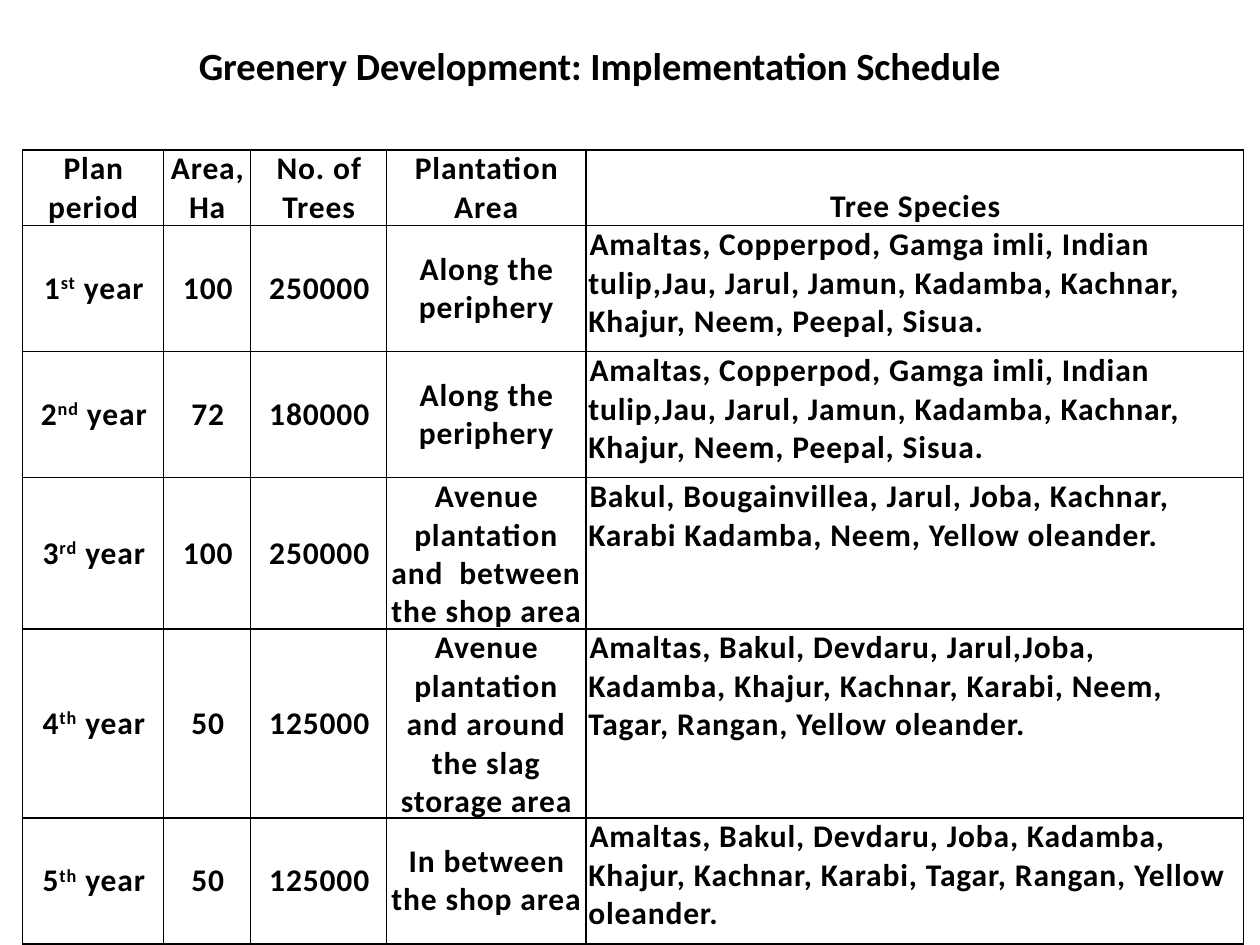
from lxml import etree
from pptx import Presentation
from pptx.dml.color import RGBColor
from pptx.enum.text import MSO_ANCHOR, MSO_AUTO_SIZE, PP_ALIGN
from pptx.oxml.ns import qn
from pptx.util import Inches, Pt

CENTER, LEFT = PP_ALIGN.CENTER, PP_ALIGN.LEFT
TOP, MIDDLE, BOTTOM = MSO_ANCHOR.TOP, MSO_ANCHOR.MIDDLE, MSO_ANCHOR.BOTTOM
RESIZE_SHAPE = MSO_AUTO_SIZE.SHAPE_TO_FIT_TEXT
TITLE_ONLY = 5
FONT = "Calibri"
COLORS = {"text": "000000", "border": "000000", "cell": "FFFFFF"}

TITLE = "Greenery Development: Implementation Schedule"
HEADERS = ["Plan period", "Area, Ha", "No. of Trees", "Plantation Area", "Tree Species"]
PERIPHERY_SPECIES = (
    "Amaltas, Copperpod, Gamga imli, Indian tulip,Jau, Jarul, Jamun, "
    "Kadamba, Kachnar, Khajur, Neem, Peepal, Sisua."
)
SCHEDULE = [
    ("1", "st", "100", "250000", "Along the periphery", PERIPHERY_SPECIES),
    ("2", "nd", "72", "180000", "Along the periphery", PERIPHERY_SPECIES),
    ("3", "rd", "100", "250000", "Avenue plantation and  between the shop area",
     "Bakul, Bougainvillea, Jarul, Joba, Kachnar, Karabi Kadamba, Neem, "
     "Yellow oleander."),
    ("4", "th", "50", "125000", "Avenue plantation and around the slag storage area",
     "Amaltas, Bakul, Devdaru, Jarul,Joba, Kadamba, Khajur, Kachnar, Karabi, "
     "Neem, Tagar, Rangan, Yellow oleander."),
    ("5", "th", "50", "125000", "In between the shop area",
     "Amaltas, Bakul, Devdaru, Joba, Kadamba, Khajur, Kachnar, Karabi, Tagar, "
     "Rangan, Yellow oleander."),
]
COLUMN_WIDTHS = [1.12, 0.69, 1.08, 1.58, 5.22]
ROW_HEIGHTS = [0.5, 1, 1, 1, 1.2, 1]


def format_run(span, size):
    """Apply the bold slide font to a run."""
    span.font.name = FONT
    span.font.size = Pt(size)
    span.font.bold = True
    span.font.color.rgb = RGBColor.from_string(COLORS["text"])


def add_title(page):
    """Place and format the slide title."""
    box = page.shapes.title
    box.left, box.top = Inches(0.05), Inches(0.28)
    box.width, box.height = Inches(9.42), Inches(0.47)
    frame = box.text_frame
    frame.text = TITLE
    frame.word_wrap = True
    frame.auto_size = RESIZE_SHAPE
    frame.vertical_anchor = TOP
    para = frame.paragraphs[0]
    para.alignment = CENTER
    format_run(para.runs[0], 22)


def add_borders(cell):
    """Draw a thin line on all four sides of a cell."""
    properties = cell._tc.get_or_add_tcPr()
    for position, side in enumerate(("a:lnL", "a:lnR", "a:lnT", "a:lnB")):
        line = etree.Element(qn(side), w=str(Pt(1)))
        fill = etree.SubElement(line, qn("a:solidFill"))
        etree.SubElement(fill, qn("a:srgbClr"), val=COLORS["border"])
        properties.insert(position, line)


def fill_cell(cell, parts, alignment, anchor):
    """Write text parts to a cell, raising every second part."""
    cell.margin_left = cell.margin_right = Inches(0.02)
    cell.margin_top = cell.margin_bottom = 0
    cell.vertical_anchor = anchor
    cell.fill.solid()
    cell.fill.fore_color.rgb = RGBColor.from_string(COLORS["cell"])
    add_borders(cell)
    para = cell.text_frame.paragraphs[0]
    para.alignment = alignment
    para._p.get_or_add_pPr().set("indent", str(Inches(0.01)))
    for index, part in enumerate(parts):
        span = para.add_run()
        span.text = part
        format_run(span, 18)
        properties = span._r.get_or_add_rPr()
        properties.set("spc", "50")
        if index % 2:
            properties.set("baseline", "30000")


def add_schedule(page):
    """Build the planting schedule table."""
    frame = page.shapes.add_table(
        len(ROW_HEIGHTS), len(COLUMN_WIDTHS), Inches(0.18), Inches(1.19),
        Inches(sum(COLUMN_WIDTHS)), Inches(sum(ROW_HEIGHTS)))
    table = frame.table
    table.first_row = table.horz_banding = False
    for column, width in zip(table.columns, COLUMN_WIDTHS):
        column.width = Inches(width)
    for row, height in zip(table.rows, ROW_HEIGHTS):
        row.height = Inches(height)
    for cell, header in zip(table.rows[0].cells, HEADERS):
        fill_cell(cell, [header], CENTER, BOTTOM)
    for index, (number, suffix, *details, species) in enumerate(SCHEDULE, 1):
        cells = list(table.rows[index].cells)
        fill_cell(cells[0], [number, suffix, " year"], CENTER, MIDDLE)
        for cell, detail in zip(cells[1:-1], details):
            fill_cell(cell, [detail], CENTER, MIDDLE)
        fill_cell(cells[-1], [species], LEFT, TOP)


def main():
    """Create and save the slide."""
    deck = Presentation()
    deck.slide_width, deck.slide_height = Inches(10), Inches(7.5)
    page = deck.slides.add_slide(deck.slide_layouts[TITLE_ONLY])
    add_schedule(page)
    add_title(page)
    deck.save("out.pptx")


if __name__ == "__main__":
    main()
